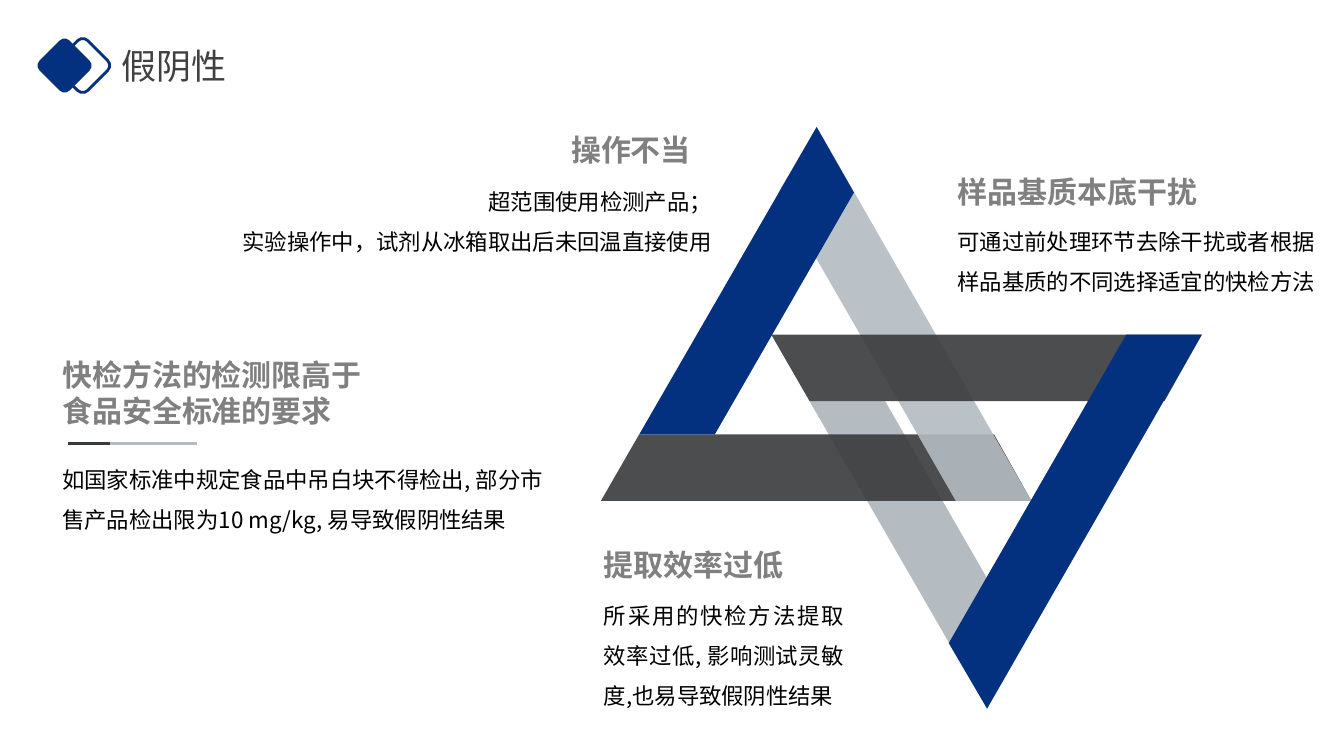
from lxml import etree
from pptx import Presentation
from pptx.dml.color import RGBColor
from pptx.enum import shapes, text
from pptx.oxml import ns
from pptx.util import Inches, Pt

FONT = "Noto Sans CJK SC"
BLUE, DARK, SILVER = "033180", "393A3B", "B4BCC2"
LEFT, RIGHT, JUSTIFY = text.PP_ALIGN.LEFT, text.PP_ALIGN.RIGHT, text.PP_ALIGN.JUSTIFY

BARS = [
    (SILVER, 100, [(9.79, 7.03), (8.03, 3.98), (8.78, 3.98), (10.16, 6.38)]),
    (DARK, 90, [(5.96, 4.97), (10.23, 4.97), (9.86, 4.31), (6.34, 4.31)]),
    (SILVER, 90, [(8.1, 1.26), (10.23, 4.97), (9.48, 4.97), (7.72, 1.91)]),
    (BLUE, 100, [(8.1, 1.26), (6.34, 4.31), (7.09, 4.31), (8.47, 1.91)]),
    (DARK, 90, [(7.65, 3.32), (11.92, 3.32), (11.55, 3.98), (8.03, 3.98)]),
    (BLUE, 100, [(9.79, 7.03), (11.92, 3.32), (11.17, 3.32), (9.41, 6.38)]),
]

HEADINGS = [
    ((9.4, 1.67, 2.58, 0.46), "样品基质本底干扰", LEFT, False),
    ((5.89, 5.37, 1.98, 0.46), "提取效率过低", LEFT, False),
    ((0.52, 3.49, 3.32, 0.82), "快检方法的检测限高于食品安全标准的要求", LEFT, True),
    ((5.56, 1.26, 1.39, 0.46), "操作不当", RIGHT, False),
]

BODIES = [
    ((9.4, 2.08, 3.83, 0.91),
     ["可通过前处理环节去除干扰或者根据样品基质的不同选择适宜的快检方法"], LEFT),
    ((5.89, 5.79, 2.58, 1.31),
     ["所采用的快检方法提取效率过低, 影响测试灵敏度,也易导致假阴性结果"], JUSTIFY),
    ((0.52, 4.44, 5.04, 0.91),
     ["如国家标准中规定食品中吊白块不得检出, 部分市售产品检出限为10 mg/kg, 易导致假阴性结果"], LEFT),
    ((2.09, 1.68, 5.07, 0.91),
     ["超范围使用检测产品；", "实验操作中，试剂从冰箱取出后未回温直接使用"], RIGHT),
]


def rgb(color):
    return RGBColor.from_string(color)


def add_bar(s, color, opacity, points):
    points = [(Inches(x), Inches(y)) for x, y in points]
    builder = s.shapes.build_freeform(*points[0], scale=1.0)
    builder.add_line_segments(points[1:], close=True)
    sp = builder.convert_to_shape()
    sp.shadow.inherit = False
    sp.fill.solid()
    sp.fill.fore_color.rgb = rgb(color)
    sp.line.fill.background()
    if opacity < 100:
        clr = sp._element.spPr.find(".//" + ns.qn("a:srgbClr"))
        etree.SubElement(clr, ns.qn("a:alpha"), val=str(opacity * 1000))


def add_text(s, box, lines, size, color, align=LEFT, bold=False, spacing=None, wrap=True):
    tf = s.shapes.add_textbox(*map(Inches, box)).text_frame
    tf.word_wrap = wrap
    tf.auto_size = text.MSO_AUTO_SIZE.SHAPE_TO_FIT_TEXT
    tf.text = "\n".join(lines)
    for p in tf.paragraphs:
        p.alignment = align
        p.line_spacing = spacing
        p.font.size = Pt(size)
        p.font.bold = bold
        p.font.color.rgb = rgb(color)
        p.font.name = FONT
        props = p._p.pPr.find(ns.qn("a:defRPr"))
        etree.SubElement(props, ns.qn("a:ea"), typeface=FONT)


def add_rule(s, left, right, y, color, width):
    line = s.shapes.add_connector(
        shapes.MSO_CONNECTOR.STRAIGHT, Inches(left), Inches(y), Inches(right), Inches(y))
    line.line.color.rgb = rgb(color)
    line.line.width = Pt(width)
    etree.SubElement(line._element.spPr, ns.qn("a:effectLst"))


def add_diamond(s, left, filled):
    sp = s.shapes.add_shape(
        shapes.MSO_SHAPE.ROUNDED_RECTANGLE,
        Inches(left), Inches(0.44), Inches(0.42), Inches(0.42))
    sp.rotation = 45
    sp.shadow.inherit = False
    if filled:
        sp.fill.solid()
        sp.fill.fore_color.rgb = rgb(BLUE)
        sp.line.fill.background()
    else:
        sp.fill.background()
        sp.line.color.rgb = rgb(BLUE)
        sp.line.width = Pt(2)


def main():
    prs = Presentation()
    prs.slide_width, prs.slide_height = Inches(13.33), Inches(7.5)
    s = prs.slides.add_slide(prs.slide_layouts[6])
    for color, opacity, points in BARS:
        add_bar(s, color, opacity, points)
    add_diamond(s, 0.61, False)
    add_diamond(s, 0.43, True)
    add_text(s, (1.11, 0.39, 5.59, 0.52), ["假阴性"], 25, "404040")
    add_rule(s, 0.67, 1.95, 4.4, SILVER, 1.75)
    add_rule(s, 0.67, 1.09, 4.4, DARK, 2)
    for box, heading, align, wrap in HEADINGS:
        add_text(s, box, [heading], 21.4, "808080", align, bold=True, wrap=wrap)
    for box, lines, align in BODIES:
        add_text(s, box, lines, 16, "000000", align, spacing=1.5)
    prs.save("out.pptx")


if __name__ == "__main__":
    main()
